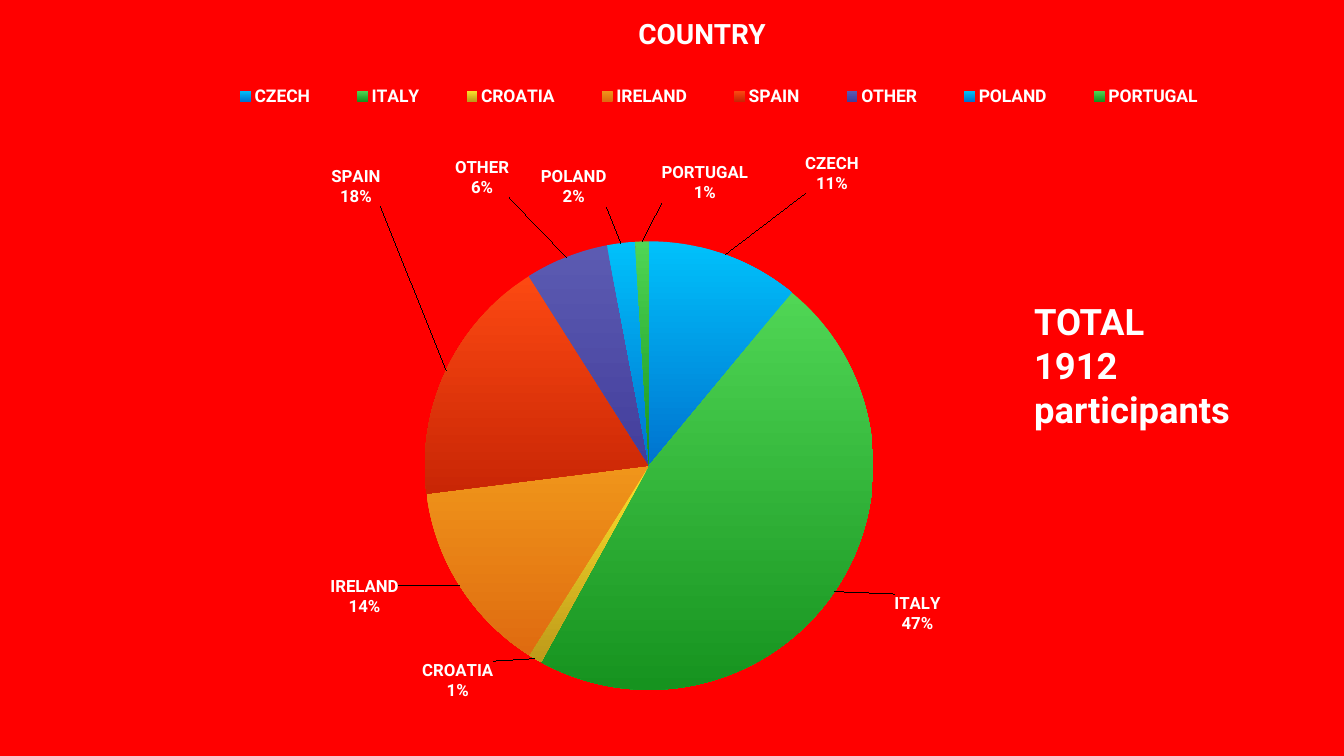
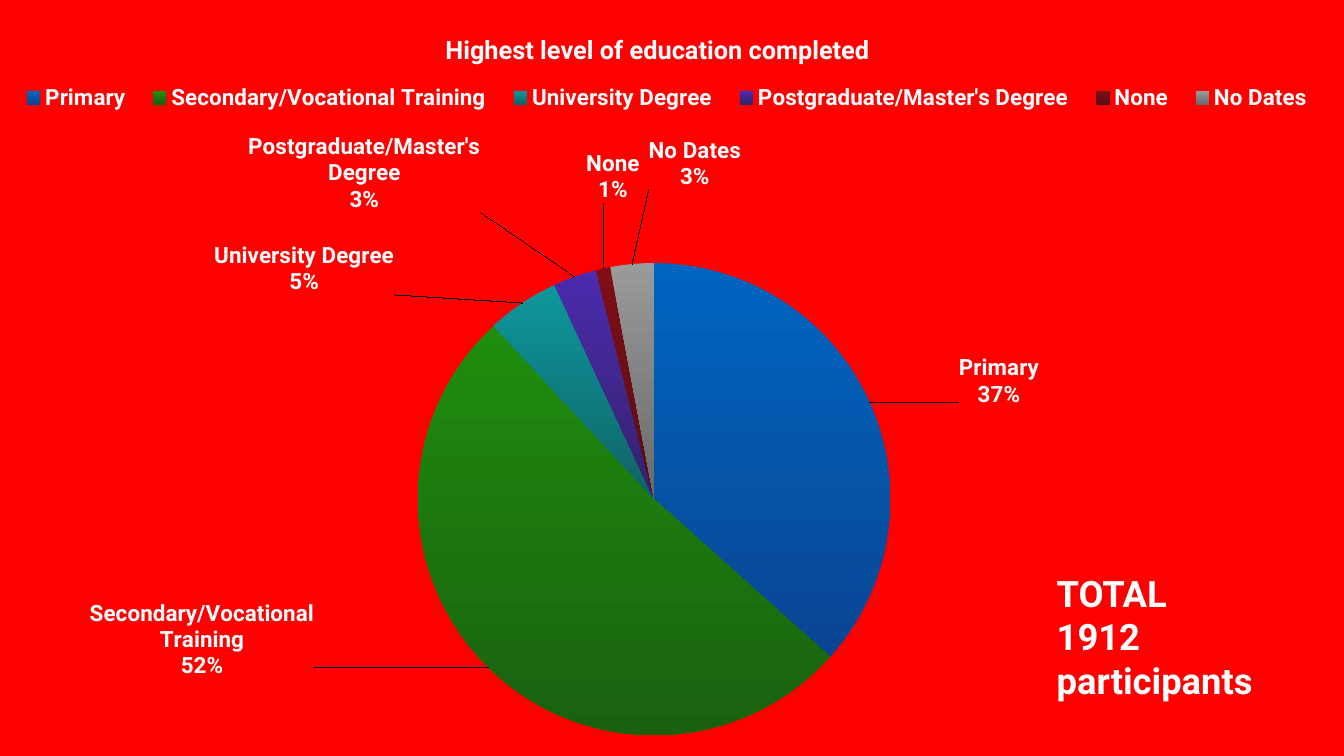
"""Build two slides of participant statistics, each with a pie chart and a total."""
import dataclasses
import typing

import lxml.etree
import pptx
import pptx.chart.data
import pptx.dml.color
import pptx.enum.chart
import pptx.enum.text
import pptx.oxml.ns
import pptx.util

Cm = pptx.util.Cm
qn = pptx.oxml.ns.qn
FONT = "Roboto"
NUMBER_FORMAT = "#,##0%"
COLOURS = {
    "background": "FF0000", "text": "FFFFFF",
    "sky": "00C1FB", "sky_end": "0073CF",
    "green": "50D655", "green_end": "16931F",
    "yellow": "FCE12B", "yellow_end": "BE9A1A",
    "orange": "F0951A", "orange_end": "DF6B10",
    "scarlet": "FC4912", "scarlet_end": "C92605",
    "violet": "5C5BB2", "violet_end": "433E9C",
    "blue": "0065C1", "blue_end": "094593",
    "forest": "1F8D0E", "forest_end": "1A610F",
    "teal": "0E979B", "teal_end": "0F6366",
    "purple": "4B2BAE", "purple_end": "34226B",
    "maroon": "810E16", "maroon_end": "550F15",
    "grey": "989B9A", "grey_end": "686A69",
}


class Box(typing.NamedTuple):
    """Left, top, width and height, in centimetres or in percent of a chart."""
    left: float
    top: float
    width: float
    height: float


@dataclasses.dataclass
class Slice:
    """One pie slice with its label shift in percent of the chart."""
    category: str
    value: int
    colour: str
    shift: tuple[float, float]
    label_lines: tuple[str, ...] = ()


@dataclasses.dataclass
class Pie:
    """A pie chart with its plot and legend areas in percent of the chart."""
    box: Box
    plot: Box
    legend: Box
    legend_size: float
    label_size: float
    slices: list[Slice]


@dataclasses.dataclass
class PieSlide:
    """A slide made of a title, a pie chart and the total."""
    title: str
    title_box: Box
    title_format: dict[str, typing.Any]
    pie: Pie
    total_box: Box


PIE_SLIDES = [
    PieSlide(
        "COUNTRY",
        Box(31.72, 0.69, 7.32, 2.01),
        {"size": 40, "align": pptx.enum.text.PP_ALIGN.CENTER, "wrap": False},
        Pie(
            Box(8.92, 3.84, 54.64, 38.71),
            Box(22.4, 21.5, 42.3, 58.4),
            Box(2, 0.1, 96, 5),
            25, 24,
            [
                Slice("CZECH", 11, "sky", (7.3, -7.6)),
                Slice("ITALY", 47, "green", (5.3, 0.1)),
                Slice("CROATIA", 1, "yellow", (-3.7, 0)),
                Slice("IRELAND", 14, "orange", (-5.4, -1.4)),
                Slice("SPAIN", 18, "scarlet", (-5.8, -21.1)),
                Slice("OTHER", 6, "violet", (-5.2, -7.4)),
                Slice("POLAND", 2, "sky", (-1.3, -4.3)),
                Slice("PORTUGAL", 1, "green", (5.8, -4.6)),
            ],
        ),
        Box(51.97, 14.91, 14.1, 6.96),
    ),
    PieSlide(
        "Highest level of education completed",
        Box(22.3, 1.55, 23.11, 3.23),
        {"size": 36.2, "anchor": pptx.enum.text.MSO_ANCHOR.TOP},
        Pie(
            Box(0, 1.55, 67.21, 47.78),
            Box(28.3, 24.5, 41.5, 49.8),
            Box(0.5, 4.6, 99, 5),
            32, 32,
            [
                Slice("Primary", 37, "blue", (6.5, 0.6)),
                Slice("Secondary/Vocational Training", 52, "forest", (-12.9, -7.3),
                      ("Secondary/Vocational", "Training", "52%")),
                Slice("University Degree", 5, "teal", (-9.5, -0.6)),
                Slice("Postgraduate/Master's Degree", 3, "purple", (-7, -6.5)),
                Slice("None", 1, "maroon", (2.8, -6.6)),
                Slice("No Dates", 3, "grey", (8.2, -7.5)),
            ],
        ),
        Box(53.11, 28.58, 14.1, 6.96),
    ),
]


def rgb(name: str) -> pptx.dml.color.RGBColor:
    """Return a named colour."""
    return pptx.dml.color.RGBColor.from_string(COLOURS[name])


def lengths(box: Box) -> list[pptx.util.Length]:
    """Return a box in centimetres as slide lengths."""
    return [Cm(length) for length in box]


def format_font(font: typing.Any, size: float, bold: bool = True) -> None:
    """Apply the shared typeface and colour at a size."""
    font.name = FONT
    font.size = pptx.util.Pt(size)
    font.bold = bold
    font.color.rgb = rgb("text")


def add_text(slide: typing.Any, text: str, box: Box, *, size: float,
             align: typing.Any = pptx.enum.text.PP_ALIGN.LEFT,
             anchor: typing.Any = pptx.enum.text.MSO_ANCHOR.MIDDLE,
             wrap: bool = True) -> None:
    """Add a text box with one paragraph for each line of text."""
    frame = slide.shapes.add_textbox(*lengths(box)).text_frame
    frame.word_wrap = wrap
    frame.vertical_anchor = anchor
    frame.margin_left = frame.margin_right = Cm(0.15)
    frame.margin_top = frame.margin_bottom = Cm(0.15)
    frame.text = text
    for paragraph in frame.paragraphs:
        paragraph.alignment = align
        format_font(paragraph.runs[0].font, size)


def chart_element(tag: str, value: typing.Any = None) -> typing.Any:
    """Make a chart element with an optional val attribute."""
    element = lxml.etree.Element(qn(f"c:{tag}"))
    if value is not None:
        element.set("val", str(value))
    return element


def set_layout(parent: typing.Any, position: int, settings: dict[str, typing.Any]) -> None:
    """Give a chart element a manual layout."""
    for existing in parent.findall(qn("c:layout")):
        parent.remove(existing)
    layout = chart_element("layout")
    manual = chart_element("manualLayout")
    for tag, value in settings.items():
        manual.append(chart_element(tag, value))
    layout.append(manual)
    parent.insert(position, layout)


def edge_layout(area: Box) -> dict[str, typing.Any]:
    """Return layout settings for an area in percent of the chart."""
    fractions = [round(percent / 100, 4) for percent in area]
    return {"xMode": "edge", "yMode": "edge", **dict(zip("xywh", fractions))}


def add_line_separator(labels: typing.Any) -> None:
    """Put the category and the percentage on separate lines."""
    separator = chart_element("separator")
    separator.text = "\n"
    labels.find(qn("c:showBubbleSize")).addnext(separator)


def format_label(series: typing.Any, index: int, part: Slice, size: float) -> None:
    """Format and shift the label of one slice."""
    label = series.points[index].data_label
    if part.label_lines:
        label.text_frame.text = "\n".join(part.label_lines)
        for paragraph in label.text_frame.paragraphs:
            format_font(paragraph.runs[0].font, size)
    else:
        format_font(label.font, size)
    label.position = pptx.enum.chart.XL_LABEL_POSITION.OUTSIDE_END
    element = series.data_labels._element.findall(qn("c:dLbl"))[index]
    across, down = (round(percent / 100, 4) for percent in part.shift)
    set_layout(element, 1, {"x": across, "y": down})
    number_format = chart_element("numFmt")
    number_format.set("formatCode", NUMBER_FORMAT)
    number_format.set("sourceLinked", "0")
    element.insert(3 if part.label_lines else 2, number_format)
    for tag, value in (("showVal", 0), ("showCatName", 1), ("showPercent", 1)):
        element.find(qn(f"c:{tag}")).set("val", str(value))
    add_line_separator(element)


def add_pie(slide: typing.Any, pie: Pie) -> None:
    """Add a pie chart with gradient slices, labels and a legend on top."""
    data = pptx.chart.data.CategoryChartData()
    data.categories = [part.category for part in pie.slices]
    data.add_series("Series 1", [part.value for part in pie.slices])
    chart = slide.shapes.add_chart(
        pptx.enum.chart.XL_CHART_TYPE.PIE, *lengths(pie.box), data).chart
    chart.has_title = False
    format_font(chart.font, 10, bold=False)
    plot = chart.plots[0]
    plot.vary_by_categories = True
    set_layout(chart._chartSpace.chart.plotArea, 0,
               {"layoutTarget": "inner", **edge_layout(pie.plot)})

    chart.has_legend = True
    chart.legend.position = pptx.enum.chart.XL_LEGEND_POSITION.TOP
    chart.legend.include_in_layout = True
    format_font(chart.legend.font, pie.legend_size)
    set_layout(chart.legend._element, 1, edge_layout(pie.legend))

    series = plot.series[0]
    labels = series.data_labels
    format_font(labels.font, pie.label_size)
    labels.number_format = NUMBER_FORMAT
    labels.number_format_is_linked = False
    labels.position = pptx.enum.chart.XL_LABEL_POSITION.OUTSIDE_END
    labels.show_value = False
    labels.show_category_name = True
    labels.show_percentage = True
    add_line_separator(labels._element)
    for index, part in enumerate(pie.slices):
        fill = series.points[index].format.fill
        fill.gradient()
        fill.gradient_angle = 270
        for stop, name in zip(fill.gradient_stops, (part.colour, f"{part.colour}_end")):
            stop.color.rgb = rgb(name)
        format_label(series, index, part, pie.label_size)


def main() -> None:
    """Build and save the presentation."""
    presentation = pptx.Presentation()
    presentation.slide_width, presentation.slide_height = Cm(67.74), Cm(38.1)
    for content in PIE_SLIDES:
        slide = presentation.slides.add_slide(presentation.slide_layouts[6])
        slide.background.fill.solid()
        slide.background.fill.fore_color.rgb = rgb("background")
        add_text(slide, content.title, content.title_box, **content.title_format)
        add_pie(slide, content.pie)
        add_text(slide, "TOTAL\n1912 participants", content.total_box, size=52)
    presentation.save("out.pptx")


if __name__ == "__main__":
    main()
